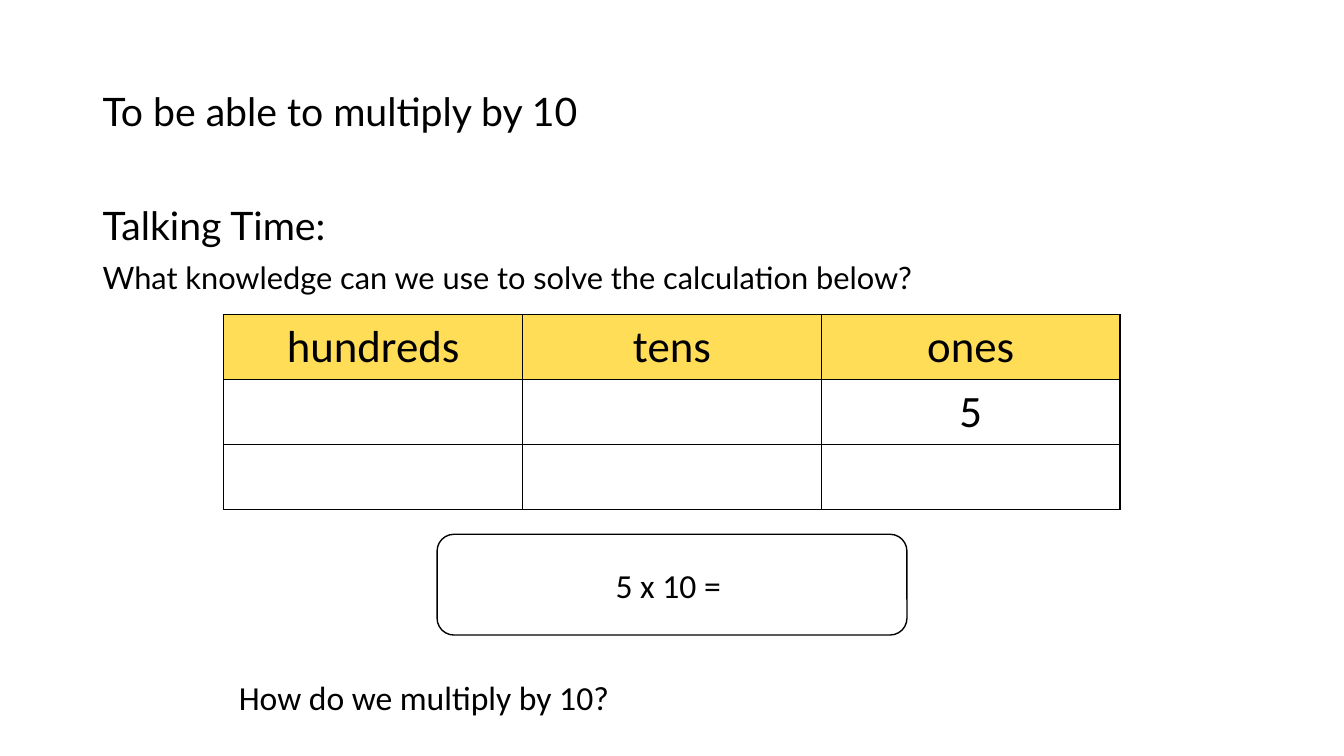
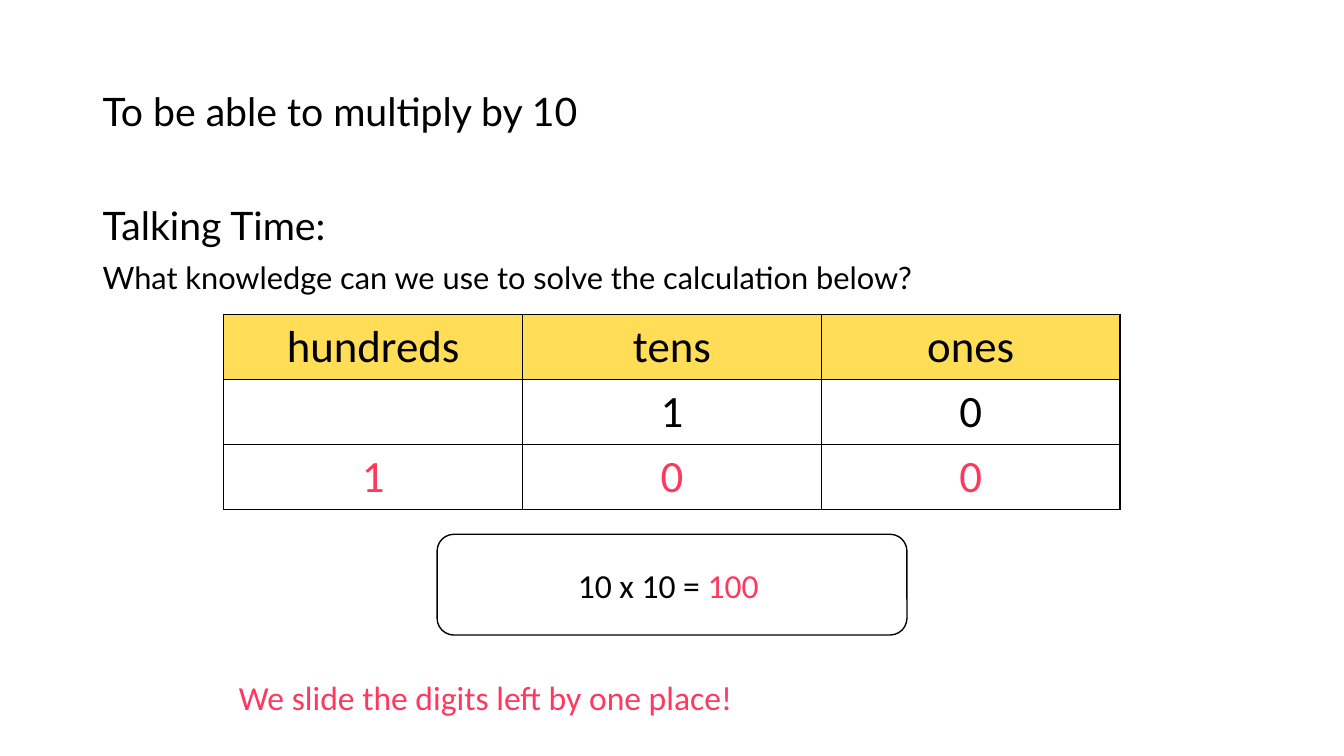
from dataclasses import dataclass
from typing import NamedTuple

from lxml.etree import SubElement
from pptx import Presentation
from pptx.dml.color import RGBColor
from pptx.enum.shapes import MSO_SHAPE
from pptx.enum.text import MSO_ANCHOR, PP_ALIGN
from pptx.oxml.ns import qn
from pptx.util import Emu, Inches, Pt

WIDTH, HEIGHT = Inches(13.33), Inches(7.5)


@dataclass(frozen=True)
class Theme:
    ink: str = "000000"
    answer: str = "FF3860"
    header: str = "FFDD57"
    paper: str = "FFFFFF"
    heading_font: str = "Lato"
    working_font: str = "Calibri"
    heading_size: int = 28
    question_size: int = 22
    working_size: int = 24
    digit_size: int = 32
    line_width: int = 1


THEME = Theme()


class Region(NamedTuple):
    left: float
    top: float
    width: float
    height: float

    def box(self) -> tuple[Emu, Emu, Emu, Emu]:
        return (Emu(int(WIDTH * self.left / 100)), Emu(int(HEIGHT * self.top / 100)),
                Emu(int(WIDTH * self.width / 100)), Emu(int(HEIGHT * self.height / 100)))


def centred(top: float, width: float, height: float) -> Region:
    return Region((100 - width) / 2, top, width, height)


TITLE = Region(6.9, 5.33, 72, 19.33)
PROMPT = Region(6.9, 26.67, 86.25, 14)
PLACE_VALUE = centred(41.6, 66.69, 25.8)
CALCULATION = centred(70.67, 34.96, 13.33)
STRATEGY = Region(17.03, 85.47, 60, 13.33)
COLUMNS = ("hundreds", "tens", "ones")


class Span(NamedTuple):
    text: str
    color: str = THEME.ink


@dataclass(frozen=True)
class Lesson:
    number: tuple[str, ...]
    product: tuple[str, ...]
    calculation: tuple[Span, ...]
    strategy: Span


LESSONS = (
    Lesson(("", "", "5"), ("", "", ""), (Span("5 x 10 = "),),
           Span("How do we multiply by 10?")),
    Lesson(("", "1", "0"), ("1", "0", "0"),
           (Span("10 x 10 = "), Span("100 ", THEME.answer)),
           Span("We slide the digits left by one place!", THEME.answer)),
)


def write(frame, *spans: Span, size: float, font: str = THEME.working_font,
          align=PP_ALIGN.LEFT, anchor=MSO_ANCHOR.MIDDLE, line_spacing: float = 1,
          space_before: float = 0, append: bool = False) -> None:
    frame.word_wrap = True
    frame.vertical_anchor = anchor
    paragraph = frame.add_paragraph() if append else frame.paragraphs[0]
    paragraph.alignment = align
    paragraph.line_spacing = line_spacing
    paragraph.space_before = Pt(space_before)
    paragraph.font.size = Pt(size)
    for span in spans:
        run = paragraph.add_run()
        run.text = span.text
        run.font.name = font
        run.font.size = Pt(size)
        run.font.color.rgb = RGBColor.from_string(span.color)


def add_headings(slide) -> None:
    title = slide.shapes.add_textbox(*TITLE.box()).text_frame
    write(title, Span("To be able to multiply by 10"), size=THEME.heading_size,
          font=THEME.heading_font, line_spacing=0.9)
    prompt = slide.shapes.add_textbox(*PROMPT.box()).text_frame
    write(prompt, Span("Talking Time:"), size=THEME.heading_size,
          font=THEME.heading_font, anchor=MSO_ANCHOR.TOP, line_spacing=0.9)
    write(prompt, Span("What knowledge can we use to solve the calculation below?"),
          size=THEME.question_size, font=THEME.heading_font, anchor=MSO_ANCHOR.TOP,
          line_spacing=0.9, space_before=10, append=True)


def add_borders(cell) -> None:
    properties = cell._tc.get_or_add_tcPr()
    for position, side in enumerate(("a:lnL", "a:lnR", "a:lnT", "a:lnB")):
        border = properties.makeelement(qn(side), {"w": str(Pt(THEME.line_width))})
        fill = SubElement(border, qn("a:solidFill"))
        SubElement(fill, qn("a:srgbClr"), {"val": THEME.ink})
        properties.insert(position, border)


def add_place_value(slide, lesson: Lesson) -> None:
    rows = ((COLUMNS, THEME.ink, THEME.header),
            (lesson.number, THEME.ink, THEME.paper),
            (lesson.product, THEME.answer, THEME.paper))
    table = slide.shapes.add_table(len(rows), len(COLUMNS), *PLACE_VALUE.box()).table
    for row, (entries, color, background) in enumerate(rows):
        for column, entry in enumerate(entries):
            cell = table.cell(row, column)
            cell.fill.solid()
            cell.fill.fore_color.rgb = RGBColor.from_string(background)
            add_borders(cell)
            spans = (Span(entry, color),) if entry else ()
            write(cell.text_frame, *spans, size=THEME.digit_size, align=PP_ALIGN.CENTER,
                  anchor=MSO_ANCHOR.TOP)


def add_calculation(slide, lesson: Lesson) -> None:
    card = slide.shapes.add_shape(MSO_SHAPE.ROUNDED_RECTANGLE, *CALCULATION.box())
    card.shadow.inherit = False
    card.fill.solid()
    card.fill.fore_color.rgb = RGBColor.from_string(THEME.paper)
    card.line.color.rgb = RGBColor.from_string(THEME.ink)
    card.line.width = Pt(THEME.line_width)
    write(card.text_frame, *lesson.calculation, size=THEME.working_size,
          align=PP_ALIGN.CENTER)


def add_lesson(deck, lesson: Lesson) -> None:
    slide = deck.slides.add_slide(deck.slide_layouts[6])
    add_headings(slide)
    add_calculation(slide, lesson)
    add_place_value(slide, lesson)
    strategy = slide.shapes.add_textbox(*STRATEGY.box())
    write(strategy.text_frame, lesson.strategy, size=THEME.working_size)


def main() -> None:
    deck = Presentation()
    deck.slide_width, deck.slide_height = WIDTH, HEIGHT
    for lesson in LESSONS:
        add_lesson(deck, lesson)
    deck.save("out.pptx")


if __name__ == "__main__":
    main()
